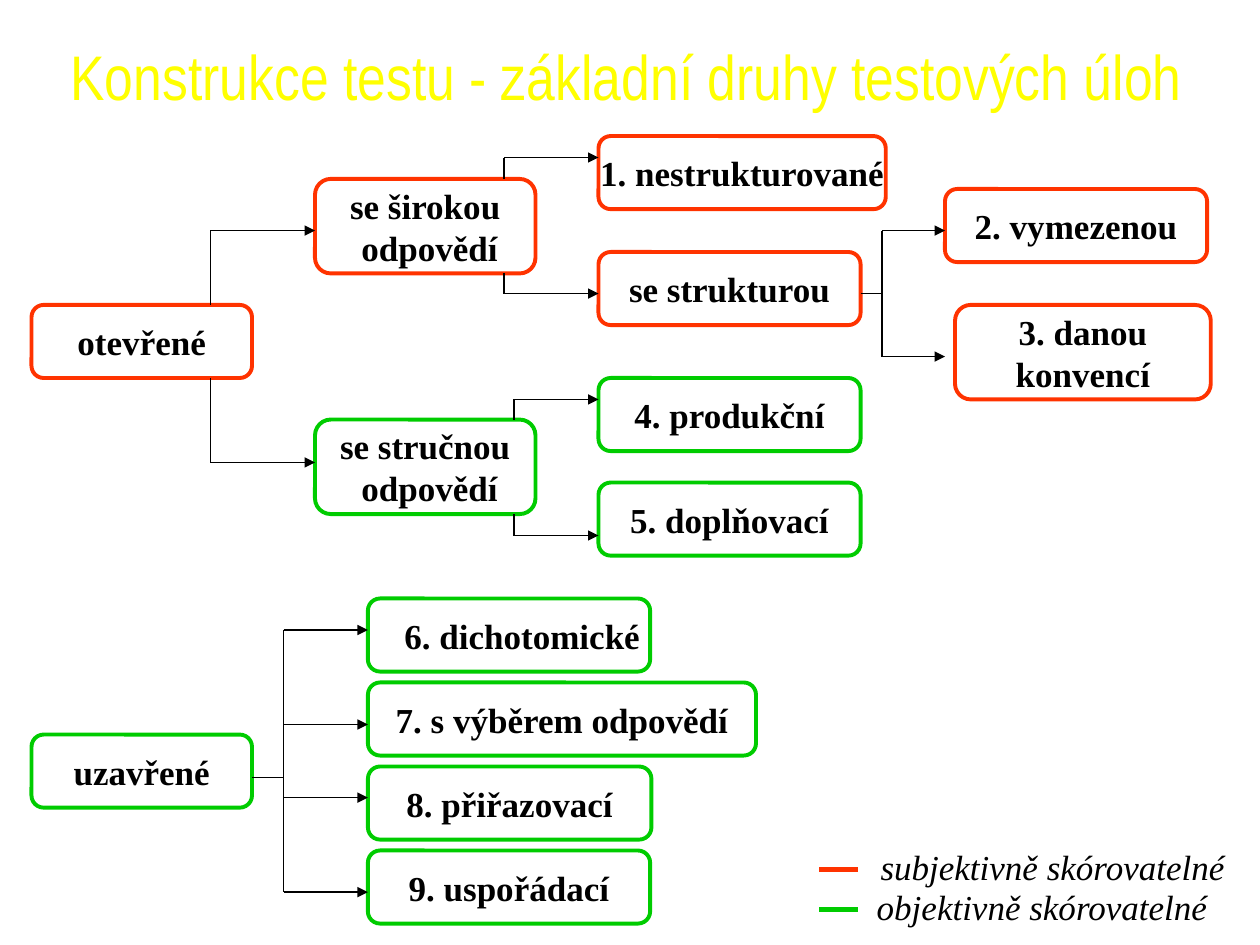
from dataclasses import dataclass
from lxml.etree import SubElement
from pptx import Presentation
from pptx.dml.color import RGBColor as RGB
from pptx.enum.shapes import MSO_CONNECTOR as Conn, MSO_SHAPE as Kind
from pptx.enum.text import MSO_ANCHOR as Anchor, MSO_AUTO_SIZE as Auto, PP_ALIGN as Align
from pptx.oxml.ns import qn
from pptx.util import Inches, Pt


@dataclass(frozen=True)
class Theme:
    red: RGB = RGB(0xFF, 0x33, 0x00)
    green: RGB = RGB(0x00, 0xCC, 0x00)
    black: RGB = RGB(0x00, 0x00, 0x00)
    yellow: RGB = RGB(0xFF, 0xFF, 0x00)
    head: str = "Arial Narrow"
    body: str = "Times New Roman"
    big: int = 36
    text: int = 20


theme = Theme()


def style(frame, font, size, color, align, bold=False, italic=False):
    for para in frame.paragraphs:
        para.alignment = align
        for run in para.runs:
            run.font.name = font
            run.font.size = Pt(size)
            run.font.color.rgb = color
            run.font.bold = bold
            run.font.italic = italic


def draw(x1, y1, x2, y2, color=theme.black, width=0.75, arrow=False):
    line = slide.shapes.add_connector(
        Conn.STRAIGHT, Inches(x1), Inches(y1), Inches(x2), Inches(y2))
    line.line.color.rgb = color
    line.line.width = Pt(width)
    if arrow:
        SubElement(line.line._get_or_add_ln(), qn("a:tailEnd"), type="triangle")
    SubElement(line._element.spPr, qn("a:effectLst"))


deck = Presentation()
deck.slide_width, deck.slide_height = Inches(10), Inches(7.5)
slide = deck.slides.add_slide(deck.slide_layouts[5])

title = slide.shapes.title
title.left, title.top = Inches(0.11), Inches(0.25)
title.width, title.height = Inches(9.72), Inches(0.62)
frame = title.text_frame
frame.text = "Konstrukce testu - základní druhy testových úloh"
frame.auto_size = Auto.NONE
frame.word_wrap = False
frame.vertical_anchor = Anchor.TOP
style(frame, theme.head, theme.big, theme.yellow, Align.CENTER)

low, tall = 0.58, 0.75
boxes = [
    ("otevřené", 0.25, 2.42, 1.75, low, theme.red),
    ("se širokou\n odpovědí", 2.5, 1.42, 1.75, tall, theme.red),
    ("se stručnou\n odpovědí", 2.5, 3.33, 1.75, tall, theme.green),
    ("1. nestrukturované", 4.75, 1.08, 2.28, low, theme.red),
    ("se strukturou", 4.75, 2, 2.08, low, theme.red),
    ("2. vymezenou", 7.5, 1.5, 2.08, low, theme.red),
    ("3. danou\nkonvencí", 7.58, 2.42, 2.03, tall, theme.red),
    ("4. produkční", 4.75, 3, 2.08, low, theme.green),
    ("5. doplňovací", 4.75, 3.83, 2.08, low, theme.green),
    ("uzavřené", 0.25, 5.83, 1.75, low, theme.green),
]
closed = [("6. dichotomické", 2.24), ("7. s výběrem odpovědí", 3.08),
          ("8. přiřazovací", 2.25), ("9. uspořádací", 2.24)]
for row, (text, wide) in enumerate(closed):
    boxes.append((text, 2.92, 4.75 + row * 2 / 3, wide, low, theme.green))

for text, left, top, wide, high, color in boxes:
    box = slide.shapes.add_shape(
        Kind.ROUNDED_RECTANGLE, Inches(left), Inches(top), Inches(wide), Inches(high))
    box.shadow.inherit = False
    box.fill.background()
    box.line.color.rgb = color
    box.line.width = Pt(2.25)
    frame = box.text_frame
    frame.text = text
    frame.word_wrap = False
    frame.vertical_anchor = Anchor.MIDDLE
    frame.margin_left = Inches(0.21 if text.startswith("6.") else 0)
    frame.margin_right = 0
    style(frame, theme.body, theme.text, theme.black, Align.CENTER, bold=True)

forks = [
    (1.67, 2.5, [(2.42, 1.83), (3, 3.67)], [1.83, 3.67]),
    (4, 4.75, [(1.42, 1.25), (2.17, 2.33)], [1.25, 2.33]),
    (7, 7.5, [(1.83, 2.83)], [1.83, 2.83]),
    (4.08, 4.75, [(3.33, 3.17), (4.08, 4.25)], [3.17, 4.25]),
    (2.25, 2.92, [(5, 7.08)], [5, 5.75, 6.33, 7.08]),
]
for stem, tip, spines, rows in forks:
    for start, end in spines:
        draw(stem, start, stem, end)
    for row in rows:
        draw(stem, row, tip, row, arrow=True)
draw(6.83, 2.33, 7, 2.33)
draw(2, 6.17, 2.25, 6.17)

legend = [("subjektivně skórovatelné", 6.89, 6.9, theme.red),
          ("objektivně skórovatelné", 6.86, 7.22, theme.green)]
for text, left, mid, color in legend:
    draw(6.5, mid, 6.81, mid, color, 3)
    label = slide.shapes.add_textbox(
        Inches(left), Inches(mid - 0.24), Inches(3.1), Inches(0.43))
    frame = label.text_frame
    frame.text = text
    frame.word_wrap = True
    style(frame, theme.body, theme.text, theme.black, Align.LEFT, italic=True)

deck.save("out.pptx")
